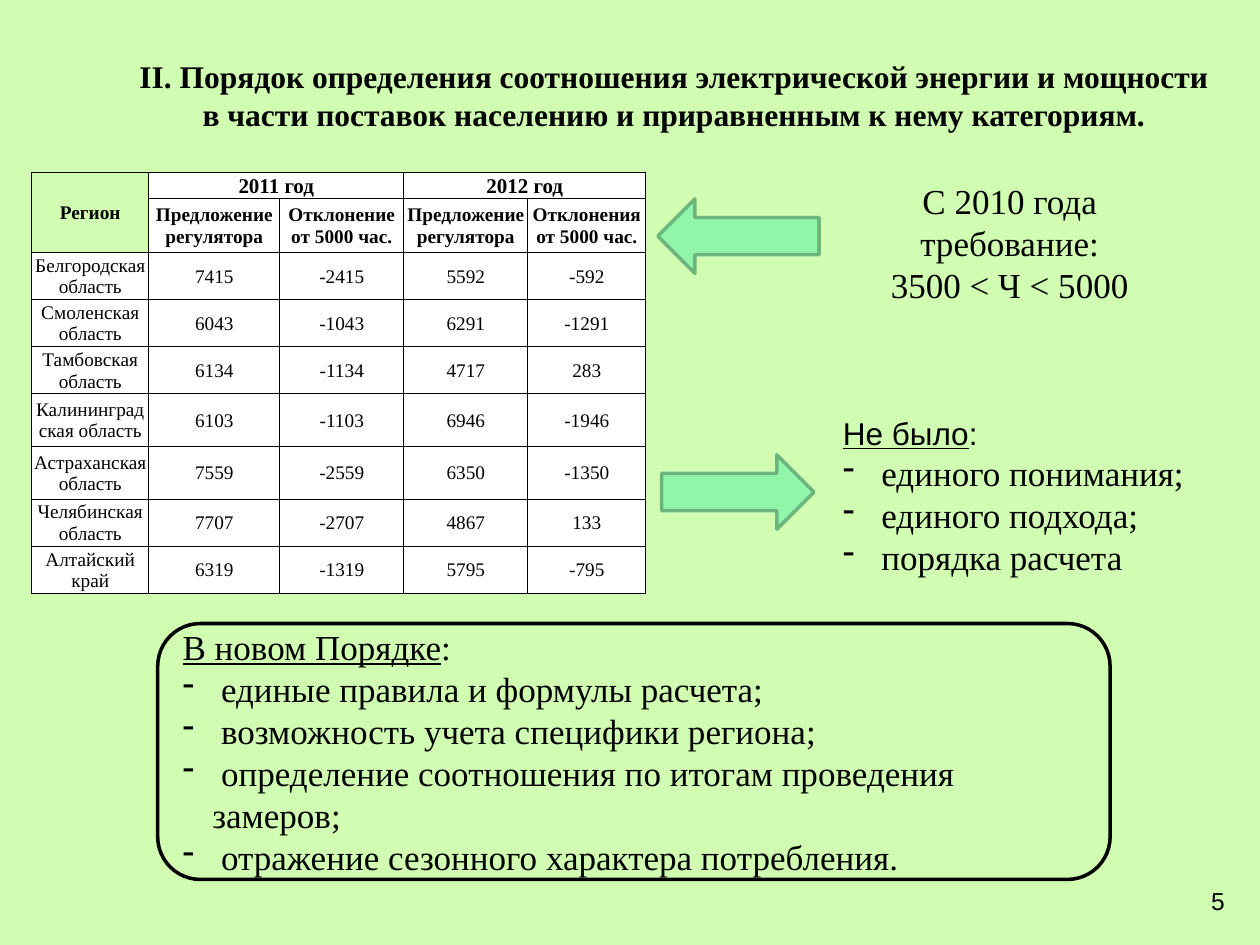
from lxml.etree import SubElement
from pptx import Presentation
from pptx.dml.color import RGBColor
from pptx.enum.shapes import MSO_SHAPE as Shape
from pptx.enum.text import MSO_ANCHOR as Anchor, PP_ALIGN as Align
from pptx.oxml.ns import qn
from pptx.util import Cm, Pt

COLORS = {
    "page": "D0FDB1",
    "ink": "000000",
    "cell": "FFFFFF",
    "arrow": "92F6AA",
    "arrow_edge": "6CB67E",
}
SERIF, SANS = "Times New Roman", "Arial"
BODY = {"name": SERIF, "size": Pt(20)}
SANS_HEAD = {"name": SANS, "size": Pt(18)}
TITLE = {"name": SERIF, "size": Pt(18), "bold": True}
NUMBER = {"name": SANS, "size": Pt(14)}
YEAR_HEAD = {"name": SERIF, "size": Pt(12), "bold": True}
COLUMN_HEAD = {"name": SERIF, "size": Pt(11), "bold": True}
CELL = {"name": SERIF, "size": Pt(11), "bold": False}

COLUMN_WIDTHS = [2.36, 2.64, 2.5, 2.5, 2.38]
ROW_HEIGHTS = [0.52, 1.09, 0.95, 0.95, 0.95, 1.06, 1.06, 0.95, 0.95]
HEADS = [
    ["Регион", "2011 год", "", "2012 год", ""],
    ["", "Предложение регулятора", "Отклонение от 5000 час.",
     "Предложение регулятора", "Отклонения от 5000 час."],
]
REGIONS = [
    ["Белгородская область", "7415", "-2415", "5592", "-592"],
    ["Смоленская область", "6043", "-1043", "6291", "-1291"],
    ["Тамбовская область", "6134", "-1134", "4717", "283"],
    ["Калининградская область", "6103", "-1103", "6946", "-1946"],
    ["Астраханская область", "7559", "-2559", "6350", "-1350"],
    ["Челябинская область", "7707", "-2707", "4867", "133"],
    ["Алтайский край", "6319", "-1319", "5795", "-795"],
]


def color(key):
    return RGBColor.from_string(COLORS[key])


def set_all(target, values):
    for name, value in values.items():
        setattr(target, name, value)


def add_run(paragraph, text, font, underline=False):
    run = paragraph.add_run()
    run.text = text
    set_all(run.font, {**font, "underline": underline})
    run.font.color.rgb = color("ink")


def add_dash(paragraph):
    props = paragraph._p.get_or_add_pPr()
    props.set("marL", str(Cm(0.6)))
    props.set("indent", str(-Cm(0.6)))
    SubElement(props, qn("a:buFontTx"))
    SubElement(props, qn("a:buChar")).set("char", "-")


def add_panel(slide, box, kind, fill, edge=None):
    panel = slide.shapes.add_shape(kind, *map(Cm, box))
    panel.shadow.inherit = False
    panel.fill.solid()
    panel.fill.fore_color.rgb = color(fill)
    if edge:
        panel.line.color.rgb = color(edge)
        panel.line.width = Pt(2)
    else:
        panel.line.fill.background()
    return panel


def add_line_of_text(slide, box, text, font, align, anchor):
    frame = slide.shapes.add_textbox(*map(Cm, box)).text_frame
    set_all(frame, {"word_wrap": True, "vertical_anchor": anchor})
    frame.paragraphs[0].alignment = align
    add_run(frame.paragraphs[0], text, font)


def add_requirement(slide, box):
    frame = add_panel(slide, box, Shape.ROUNDED_RECTANGLE, "page").text_frame
    set_all(frame, {"word_wrap": True, "vertical_anchor": Anchor.MIDDLE})
    condition, limits = frame.paragraphs[0], frame.add_paragraph()
    add_run(condition, "С 2010 года требование:", BODY)
    add_run(limits, "3500 < Ч < 5000", BODY)
    for paragraph in (condition, limits):
        paragraph.alignment = Align.CENTER


def add_dash_list(slide, box, head, head_font, points, edge=None):
    frame = add_panel(slide, box, Shape.ROUNDED_RECTANGLE, "page", edge).text_frame
    set_all(frame, {"word_wrap": True, "vertical_anchor": Anchor.MIDDLE})
    heading = frame.paragraphs[0]
    heading.alignment = Align.LEFT
    add_run(heading, head, head_font, underline=True)
    add_run(heading, ":", head_font)
    for point in points:
        paragraph = frame.add_paragraph()
        add_dash(paragraph)
        paragraph.alignment = Align.LEFT
        add_run(paragraph, " " + point, BODY)


def style_cell(cell, text, font, filled):
    set_all(cell, {"margin_left": Cm(0.02), "margin_right": Cm(0.02),
                   "margin_top": Cm(0.02), "margin_bottom": 0,
                   "vertical_anchor": Anchor.MIDDLE})
    paragraph = cell.text_frame.paragraphs[0]
    paragraph.alignment = Align.CENTER
    if text:
        add_run(paragraph, text, font)
    # Borders come before the fill in the cell properties
    props = cell._tc.get_or_add_tcPr()
    for side in ("a:lnL", "a:lnR", "a:lnT", "a:lnB"):
        border = SubElement(props, qn(side), w=str(Pt(0.5)))
        ink = SubElement(border, qn("a:solidFill"))
        SubElement(ink, qn("a:srgbClr"), val=COLORS["ink"])
    if filled:
        cell.fill.solid()
        cell.fill.fore_color.rgb = color("cell")
    else:
        cell.fill.background()


def add_region_table(slide, left, top):
    rows = HEADS + REGIONS
    size = (sum(COLUMN_WIDTHS), sum(ROW_HEIGHTS))
    table = slide.shapes.add_table(
        len(rows), len(COLUMN_WIDTHS), *map(Cm, (left, top, *size))).table
    table.first_row = table.horz_banding = False
    for column, width in zip(table.columns, COLUMN_WIDTHS):
        column.width = Cm(width)
    for row, height in zip(table.rows, ROW_HEIGHTS):
        row.height = Cm(height)
    for r, texts in enumerate(rows):
        for c, text in enumerate(texts):
            if r == 0 and c > 0:
                font = YEAR_HEAD
            else:
                font = COLUMN_HEAD if r < len(HEADS) else CELL
            style_cell(table.cell(r, c), text, font, c > 0 or r >= len(HEADS))
    # Region head spans two rows, each year spans two columns
    for start, end in [((0, 0), (1, 0)), ((0, 1), (0, 2)), ((0, 3), (0, 4))]:
        table.cell(*start).merge(table.cell(*end))


def main():
    prs = Presentation()
    prs.slide_width, prs.slide_height = Cm(25.4), Cm(19.05)
    slide = prs.slides.add_slide(prs.slide_layouts[6])
    slide.background.fill.solid()
    slide.background.fill.fore_color.rgb = color("page")

    # Figures by region
    add_region_table(slide, 0.64, 3.48)

    # Remarks beside the table
    add_requirement(slide, (16.94, 3.05, 6.83, 3.66))
    add_dash_list(slide, (16.54, 7.92, 7.82, 4.14), "Не было", SANS_HEAD,
                  ["единого понимания;", "единого подхода;", "порядка расчета"])

    # Title
    add_line_of_text(
        slide, (2.49, 1.02, 22.2, 1.8),
        "ΙΙ. Порядок определения соотношения электрической энергии и мощности "
        "в части поставок населению и приравненным к нему категориям.",
        TITLE, Align.CENTER, Anchor.MIDDLE)

    # Arrows between the table and the remarks
    to_table = add_panel(slide, (13.26, 4.01, 3.25, 1.5), Shape.RIGHT_ARROW,
                         "arrow", "arrow_edge")
    to_table.rotation = 180
    add_panel(slide, (13.34, 9.17, 3.07, 1.5), Shape.RIGHT_ARROW,
              "arrow", "arrow_edge")

    # Slide number
    add_line_of_text(slide, (19.02, 17.73, 5.92, 1.32), "5", NUMBER,
                     Align.RIGHT, Anchor.TOP)

    # What the new procedure brings
    add_dash_list(slide, (3.18, 12.57, 19.2, 5.16), "В новом Порядке", BODY,
                  ["единые правила и формулы расчета;",
                   "возможность учета специфики региона;",
                   "определение соотношения по итогам проведения замеров;",
                   "отражение сезонного характера потребления."], "ink")

    prs.save("out.pptx")


if __name__ == "__main__":
    main()
